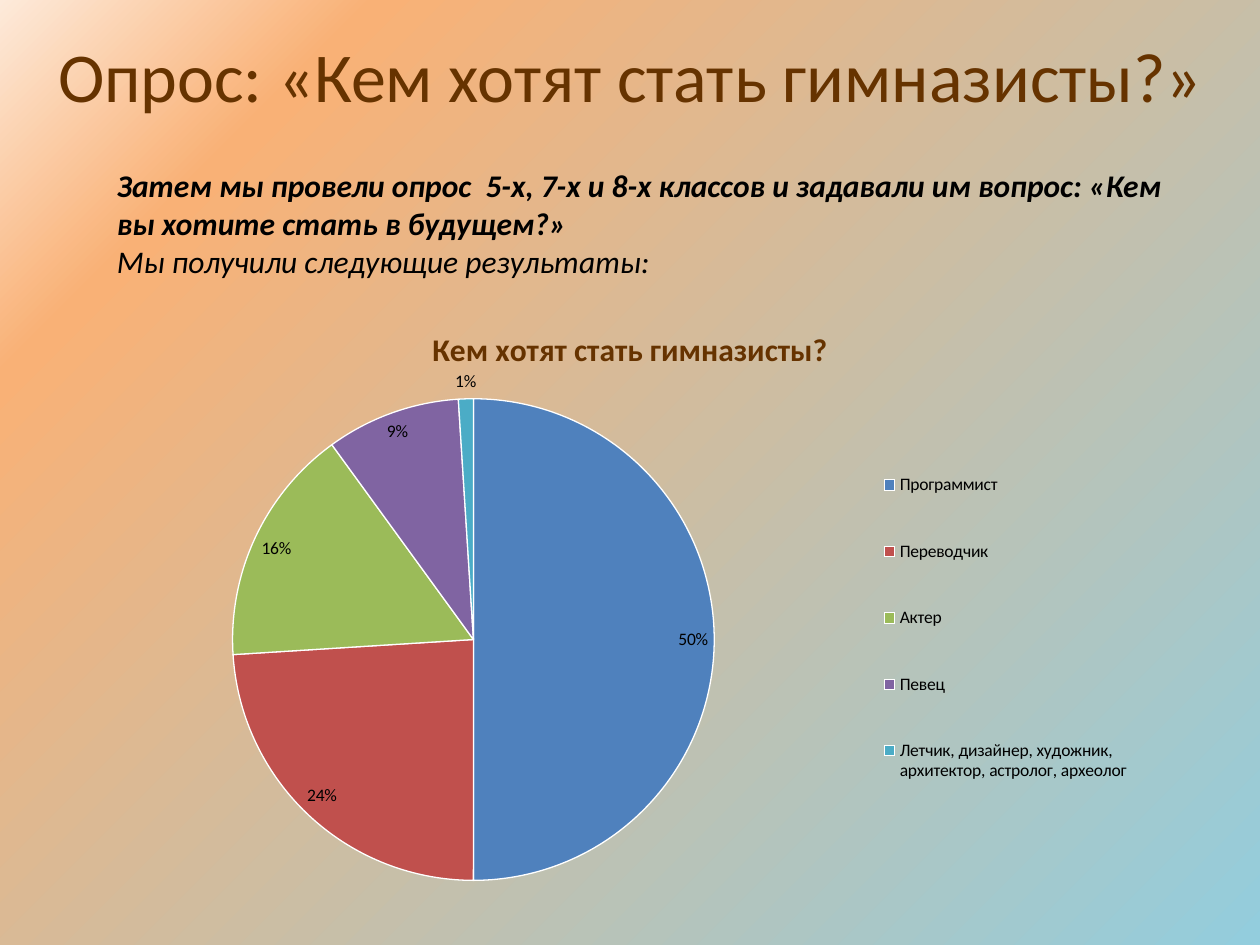
from pptx import Presentation
from pptx.chart.data import CategoryChartData
from pptx.dml.color import RGBColor
from pptx.enum.chart import XL_CHART_TYPE, XL_LABEL_POSITION, XL_LEGEND_POSITION
from pptx.enum.text import MSO_ANCHOR, MSO_AUTO_SIZE, PP_ALIGN
from pptx.oxml import parse_xml
from pptx.oxml.ns import nsdecls, qn
from pptx.util import Inches, Pt

FONT = "Calibri"
COLORS = {
    "brown": "663300", "black": "000000", "white": "FFFFFF",
    "sky": "93CDDD", "orange": "F9B176", "cream": "FDEADA",
}
STOPS = [(0, "sky", 82), (83, "orange", 64), (100, "cream", 85)]
JOBS = [
    ("Программист", 50, "4F81BD"),
    ("Переводчик", 24, "C0504D"),
    ("Актер", 16, "9BBB59"),
    ("Певец", 9, "8064A2"),
    ("Летчик, дизайнер, художник, архитектор, астролог, археолог", 1, "4BACC6"),
]


def color(name):
    return RGBColor.from_string(COLORS[name])


def style(font, size, name, bold=False, italic=False):
    font.name = FONT
    font.size = Pt(size)
    font.bold = bold
    font.italic = italic
    font.color.rgb = color(name)


def add_run(para, text, *look):
    run = para.add_run()
    run.text = text
    style(run.font, *look)


def paint_back(slide):
    stops = "".join(
        f'<a:gs pos="{pos * 1000}"><a:srgbClr val="{COLORS[name]}">'
        f'<a:alpha val="{alpha * 1000}"/></a:srgbClr></a:gs>'
        for pos, name, alpha in STOPS
    )
    back = parse_xml(
        f'<p:bg {nsdecls("p", "a")}><p:bgPr><a:gradFill rotWithShape="1">'
        f'<a:gsLst>{stops}</a:gsLst><a:path path="circle">'
        '<a:fillToRect l="100000" t="100000"/></a:path></a:gradFill>'
        '<a:effectLst/></p:bgPr></p:bg>'
    )
    slide.element.cSld.insert(0, back)


def set_title(slide):
    title = slide.shapes.title
    title.left, title.top = Inches(0), Inches(0.21)
    title.width, title.height = Inches(10), Inches(0.77)
    frame = title.text_frame
    frame.word_wrap = True
    frame.auto_size = MSO_AUTO_SIZE.SHAPE_TO_FIT_TEXT
    frame.vertical_anchor = MSO_ANCHOR.TOP
    para = frame.paragraphs[0]
    para.alignment = PP_ALIGN.CENTER
    add_run(para, "Опрос: «Кем хотят стать гимназисты?»", 40, "brown")


def add_intro(slide):
    box = slide.shapes.add_textbox(Inches(0.83), Inches(1.27), Inches(8.5), Inches(1.01))
    frame = box.text_frame
    frame.word_wrap = True
    frame.auto_size = MSO_AUTO_SIZE.SHAPE_TO_FIT_TEXT
    add_run(
        frame.paragraphs[0],
        "Затем мы провели опрос  5-х, 7-х и 8-х классов и задавали им вопрос: "
        "«Кем вы хотите стать в будущем?»",
        18, "black", True, True,
    )
    add_run(frame.add_paragraph(), "Мы получили следующие результаты:", 18, "black", False, True)


def place(part, index, x, y, w, h, inner=False):
    for old in part.findall(qn("c:layout")):
        part.remove(old)
    target = '<c:layoutTarget val="inner"/>' if inner else ""
    sizes = "".join(f'<c:{key} val="{val}"/>' for key, val in zip("xywh", (x, y, w, h)))
    part.insert(index, parse_xml(
        f'<c:layout {nsdecls("c")}><c:manualLayout>{target}<c:xMode val="edge"/>'
        f'<c:yMode val="edge"/>{sizes}</c:manualLayout></c:layout>'
    ))


def add_pie(slide):
    data = CategoryChartData()
    data.categories = [job for job, _, _ in JOBS]
    data.add_series("Series 1", [share for _, share, _ in JOBS])
    chart = slide.shapes.add_chart(
        XL_CHART_TYPE.PIE, Inches(0.86), Inches(2.41), Inches(8.28), Inches(4.72), data
    ).chart
    style(chart.font, 10, "black")
    chart.has_title = True
    add_run(
        chart.chart_title.text_frame.paragraphs[0],
        "Кем хотят стать гимназисты?", 18, "brown", True,
    )
    chart.has_legend = True
    legend = chart.legend
    legend.position = XL_LEGEND_POSITION.RIGHT
    legend.include_in_layout = False
    style(legend.font, 10, "black")
    place(chart.element.find(f'.//{qn("c:legend")}'), 1, 0.73, 0.21, 0.26, 0.67)
    place(chart.element.find(f'.//{qn("c:plotArea")}'), 0, 0, 0.16, 0.7, 0.81, True)
    plot = chart.plots[0]
    plot.vary_by_categories = True
    plot.has_data_labels = True
    labels = plot.data_labels
    labels.show_percentage = True
    labels.show_value = False
    labels.number_format = "0%"
    labels.number_format_is_linked = False
    labels.position = XL_LABEL_POSITION.BEST_FIT
    style(labels.font, 10, "black")
    for i, (_, _, tint) in enumerate(JOBS):
        part = plot.series[0].points[i].format
        part.fill.solid()
        part.fill.fore_color.rgb = RGBColor.from_string(tint)
        part.line.color.rgb = color("white")
        part.line.width = Pt(0.75)


def main():
    deck = Presentation()
    deck.slide_width, deck.slide_height = Inches(10), Inches(7.5)
    slide = deck.slides.add_slide(deck.slide_layouts[5])
    paint_back(slide)
    set_title(slide)
    add_pie(slide)
    add_intro(slide)
    deck.save("out.pptx")


if __name__ == "__main__":
    main()
